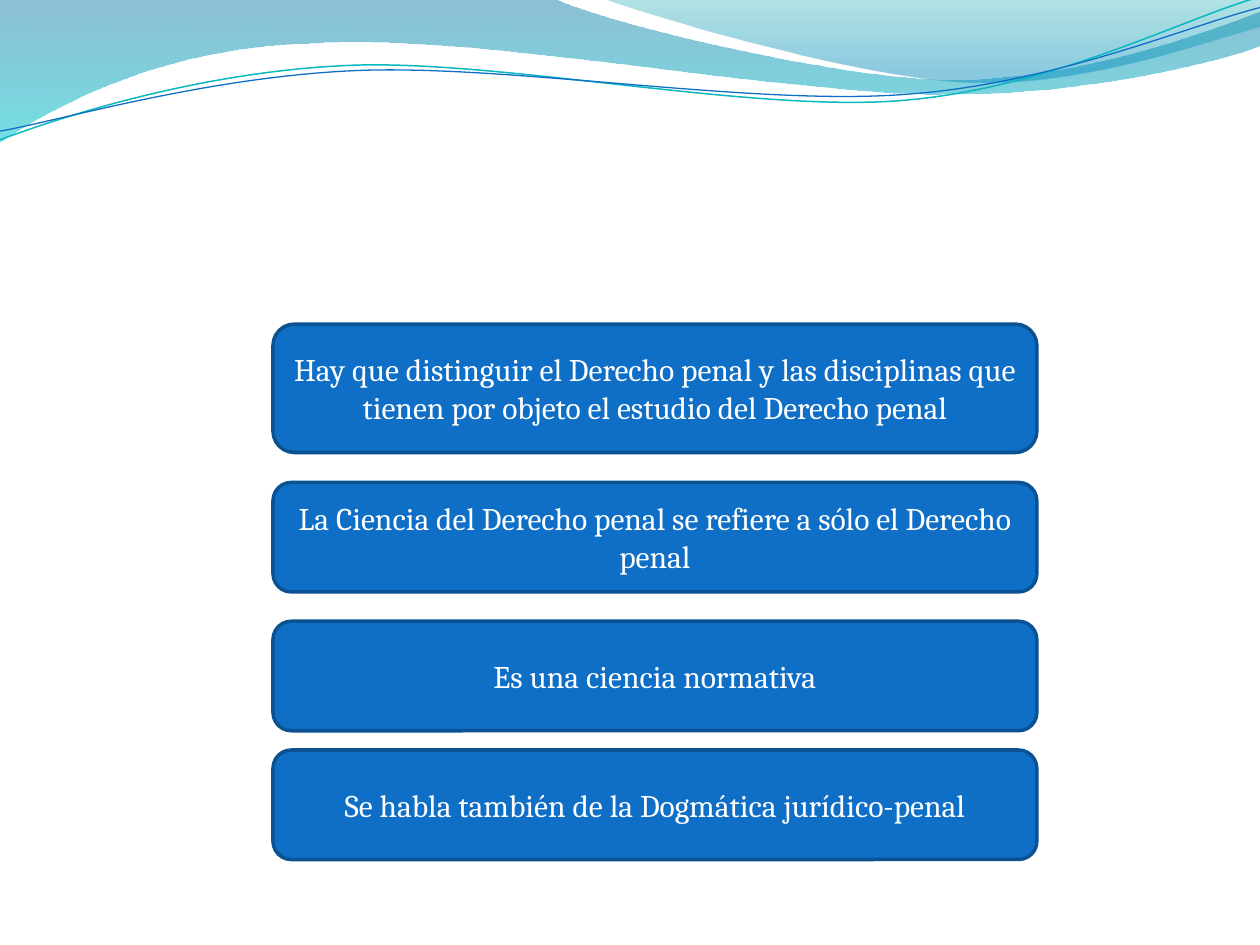
from pptx import Presentation
from pptx.dml.color import RGBColor
from pptx.enum.shapes import MSO_SHAPE as Shape
from pptx.enum.text import MSO_ANCHOR as Anchor, PP_ALIGN as Align
from pptx.oxml.ns import qn
from pptx.util import Pt
from lxml.etree import SubElement

COLORS = {
    "box": "0F6FC6", "border": "0B5292", "text": "FFFFFF",
    "blue_line": "0F6FC6", "teal_line": "0AB8BF",
    "deep_blue": "0074A1", "cyan": "00C6CF",
    "teal": "00A1A9", "sky_blue": "008BBF",
}

# Outlines in points: a step of one point is straight, of three a Bezier curve
LARGE_WAVE = [
    [(0, 0)], [(316.8, -0.7)],
    [(342.7, 12.2), (478.1, 45.4), (545.8, 45.4)],
    [(614.2, 45.4), (689.8, 18.7), (720, 6.5)],
    [(720.7, 25.9)],
    [(707.8, 31.7), (626.4, 54.7), (537.1, 54)],
    [(447.8, 54), (275, 20.2), (185, 24.5)],
    [(92.9, 25.9), (33.1, 59.8), (-0.7, 81.4)],
    [(0, 0)],
]
SMALL_WAVE = [
    [(344.9, -0.7)],
    [(366.5, 7.9), (491, 44.6), (553.7, 46.8)],
    [(616.3, 49.7), (691.9, 23), (720, 15.1)],
    [(720, 0)], [(344.9, -0.7)],
]
TEAL_LINE = [
    [(0, 79.9)],
    [(34.6, 67), (113.8, 41), (199.4, 37.4)],
    [(284.4, 33.8), (427, 64.1), (513.4, 57.6)],
    [(599.8, 51.1), (675.4, 10.8), (718.6, -1.4)],
]
BLUE_LINE = [
    [(0, 74.9)],
    [(33.8, 69.1), (118.1, 43.9), (203.8, 40.3)],
    [(290.2, 36.7), (429.8, 60.5), (516.2, 54)],
    [(601.9, 48.2), (677.5, 15.1), (720, 4.3)],
]

# Top, height and wording of each box
STATEMENTS = [
    (185.2, 73.4, "Hay que distinguir el Derecho penal y las disciplinas que "
                  "tienen por objeto el estudio del Derecho penal"),
    (275.7, 62.6, "La Ciencia del Derecho penal se refiere a sólo el Derecho penal"),
    (355, 62.6, "Es una ciencia normativa"),
    (428.6, 62.6, "Se habla también de la Dogmática jurídico-penal"),
]


def color(name):
    return RGBColor.from_string(COLORS[name])


def add_outline(page, outline, close):
    """Draw all points as straight steps, then join threes into curves."""
    points = [(Pt(x), Pt(y)) for step in outline for x, y in step]
    builder = page.shapes.build_freeform(*points[0])
    builder.add_line_segments(points[1:], close=close)
    shape = builder.convert_to_shape()
    shape.shadow.inherit = False

    segments = iter(list(shape.element.iter(qn("a:lnTo"))))
    for step in outline[1:]:
        first, *others = [next(segments) for _ in step]
        if others:
            first.tag = qn("a:cubicBezTo")
        for segment in others:
            first.append(segment[0])
            segment.getparent().remove(segment)
    return shape


def add_wave(page, outline, stops):
    """Add a filled wave; each stop is position, colour name and opacity."""
    wave = add_outline(page, outline, close=True)
    wave.line.fill.background()
    wave.fill.gradient()
    wave.fill.gradient_angle = 270
    for stop, (position, name, _) in zip(wave.fill.gradient_stops, stops):
        stop.position = position
        stop.color.rgb = color(name)
    tags = list(wave.element.iter(qn("a:srgbClr")))
    for tag, (_, _, opacity) in zip(tags, stops):
        SubElement(tag, qn("a:alpha")).set("val", str(opacity * 1000))


def add_curve(page, outline, name, width):
    curve = add_outline(page, outline, close=False)
    curve.fill.background()
    curve.line.color.rgb = color(name)
    curve.line.width = Pt(width)


def write_text(shape, text, *, size=18, font="Cambria", name="text",
               align=Align.CENTER, anchor=Anchor.MIDDLE):
    frame = shape.text_frame
    frame.word_wrap = True
    frame.vertical_anchor = anchor
    para = frame.paragraphs[0]
    para.alignment = align
    span = para.add_run()
    span.text = text
    span.font.size = Pt(size)
    span.font.name = font
    span.font.color.rgb = color(name)


def add_box(page, top, height, text):
    box = page.shapes.add_shape(Shape.ROUNDED_RECTANGLE, Pt(156), Pt(top),
                                Pt(436.5), Pt(height))
    box.shadow.inherit = False
    box.fill.solid()
    box.fill.fore_color.rgb = color("box")
    box.line.color.rgb = color("border")
    box.line.width = Pt(2)
    write_text(box, text)


def main():
    deck = Presentation()
    deck.slide_width, deck.slide_height = Pt(720), Pt(540)
    page = deck.slides.add_slide(deck.slide_layouts[6])

    # Waves along the top
    add_wave(page, LARGE_WAVE, [(0, "deep_blue", 45), (1, "cyan", 55)])
    add_wave(page, SMALL_WAVE, [(0, "teal", 30), (0.8, "sky_blue", 45)])
    add_curve(page, TEAL_LINE, "teal_line", 0.85)
    add_curve(page, BLUE_LINE, "blue_line", 0.75)

    # Statements
    for top, height, text in STATEMENTS:
        add_box(page, top, height, text)

    deck.save("out.pptx")


if __name__ == "__main__":
    main()
